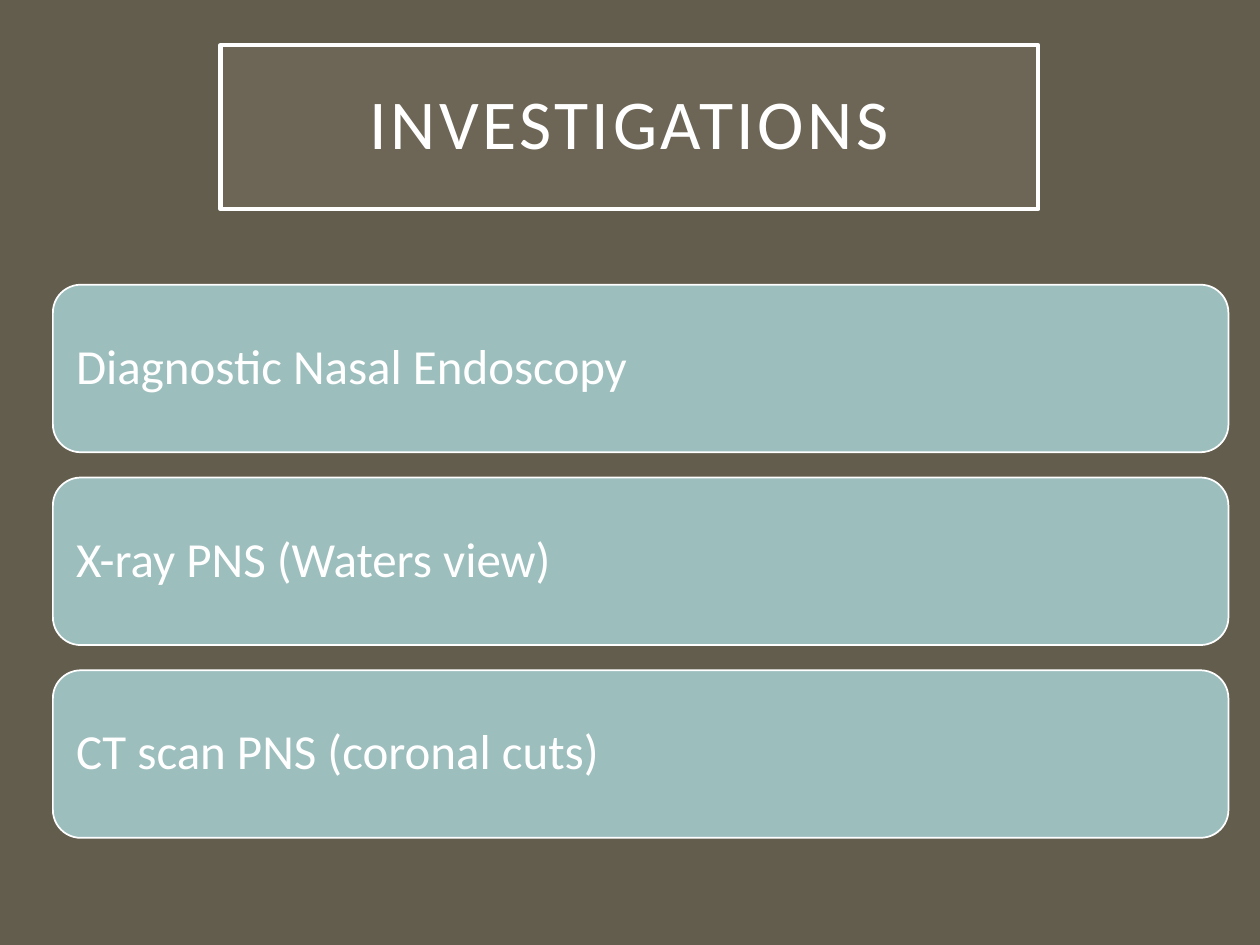
from dataclasses import dataclass

from lxml import etree
from pptx import Presentation
from pptx import util as u
from pptx.dml.color import RGBColor
from pptx.enum import shapes, text
from pptx.oxml.ns import qn


@dataclass(frozen=True)
class Theme:
    back: str = "635D4D"
    panel: str = "A7A08E"
    card: str = "9CBEBD"
    ink: str = "FFFFFF"
    font: str = "Calibri"
    head: int = 40
    body: int = 28


THEME = Theme()
TESTS = [
    "Diagnostic Nasal Endoscopy",
    "X-ray PNS (Waters view)",
    "CT scan PNS (coronal cuts)",
]


def paint(fill, color):
    fill.solid()
    fill.fore_color.rgb = RGBColor.from_string(color)


def add_box(slide, kind, box, color, width):
    shape = slide.shapes.add_shape(kind, *map(u.Inches, box))
    shape.shadow.inherit = False
    paint(shape.fill, color)
    paint(shape.line.fill, THEME.ink)
    shape.line.width = u.Pt(width)
    return shape


def set_text(shape, words, size, align, inset):
    frame = shape.text_frame
    frame.text = words
    frame.word_wrap = True
    frame.vertical_anchor = text.MSO_ANCHOR.MIDDLE
    frame.margin_left = frame.margin_right = u.Inches(inset)
    frame.margin_top = frame.margin_bottom = u.Inches(inset)
    para = frame.paragraphs[0]
    para.alignment = align
    para.line_spacing = 0.9
    run = para.runs[0]
    run.font.name = THEME.font
    run.font.size = u.Pt(size)
    run.font.color.rgb = RGBColor.from_string(THEME.ink)
    return run


def add_title(slide, words):
    shape = add_box(slide, shapes.MSO_SHAPE.RECTANGLE,
                    (1.75, 0.36, 6.49, 1.3), THEME.panel, 2.5)
    # Panel at 15% opacity
    color = shape.fill._xPr.find(qn("a:solidFill"))[0]
    etree.SubElement(color, qn("a:alpha")).set("val", "15000")
    run = set_text(shape, words, THEME.head, text.PP_ALIGN.CENTER, 0.2)
    # Letter spacing of 2 pt
    run.font._element.set("spc", "200")


def add_cards(slide, items):
    top, tall, gap = 2.26, 1.33, 0.2
    for i, words in enumerate(items):
        box = (0.42, top + i * (tall + gap), 9.33, tall)
        card = add_box(slide, shapes.MSO_SHAPE.ROUNDED_RECTANGLE,
                       box, THEME.card, 1)
        # The rounded corners add 0.06 to this inset
        set_text(card, words, THEME.body, text.PP_ALIGN.LEFT, 0.12)


def main():
    deck = Presentation()
    deck.slide_width, deck.slide_height = u.Inches(10), u.Inches(7.5)
    slide = deck.slides.add_slide(deck.slide_layouts[6])
    paint(slide.background.fill, THEME.back)

    # Heading, then one card per test
    add_title(slide, "INVESTIGATIONS")
    add_cards(slide, TESTS)
    deck.save("out.pptx")


if __name__ == "__main__":
    main()
